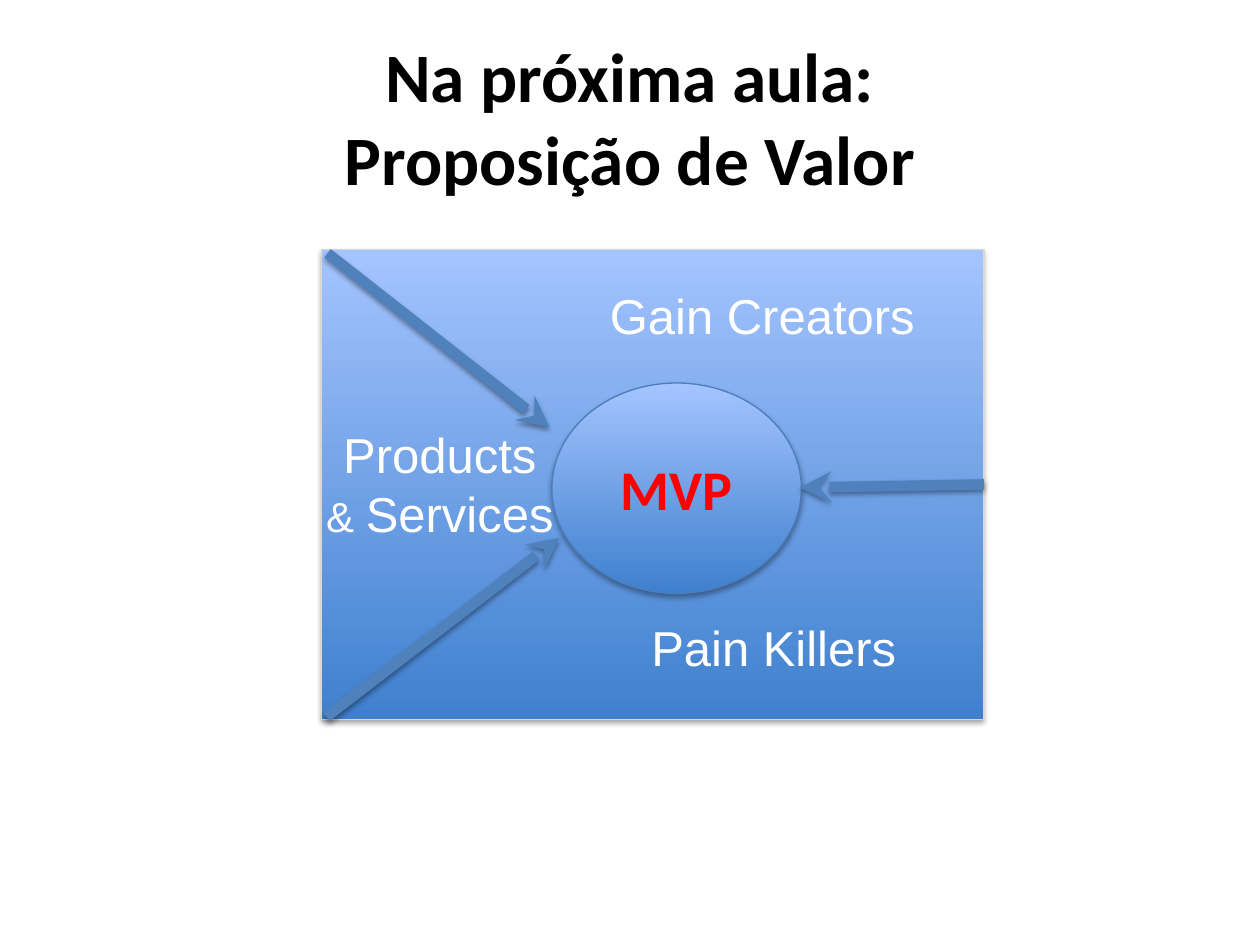
import pptx
import pptx.util
import pptx.oxml
import pptx.oxml.ns
import pptx.dml.color
import pptx.enum.shapes
import pptx.enum.text

Inches = pptx.util.Inches
Pt = pptx.util.Pt
Shape = pptx.enum.shapes.MSO_SHAPE
COLORS = {"deep": "3F80CE", "pale": "A4C4FF", "frame": "D9D9D9", "rim": "4B7EBC",
          "arrow": "4F81BD", "white": "FFFFFF", "black": "000000", "red": "FF0000"}


class Deck:
    """Holds the style and the current slide, and draws each kind of element."""

    def __init__(self):
        self.prs = pptx.Presentation()
        self.prs.slide_width, self.prs.slide_height = Inches(10), Inches(7.5)
        self.slide = self.prs.slides.add_slide(self.prs.slide_layouts[6])

    def color(self, name):
        return pptx.dml.color.RGBColor.from_string(COLORS[name])

    def shade(self, item, alpha, drop):
        props = item._element.spPr
        for old in props.findall(pptx.oxml.ns.qn("a:effectLst")):
            props.remove(old)
        props.append(pptx.oxml.parse_xml(
            f'<a:effectLst {pptx.oxml.ns.nsdecls("a")}>'
            f'<a:outerShdw blurRad="{Pt(3.1)}" dist="{Pt(drop)}" dir="5400000" rotWithShape="0">'
            f'<a:srgbClr val="{COLORS["black"]}"><a:alpha val="{alpha * 1000}"/></a:srgbClr>'
            '</a:outerShdw></a:effectLst>'))

    def shape(self, kind, box, line):
        item = self.slide.shapes.add_shape(kind, *map(Inches, box))
        item.fill.gradient()
        item.fill.gradient_angle = 90
        for stop, name in zip(item.fill.gradient_stops, ("deep", "pale")):
            stop.color.rgb = self.color(name)
            stop.position = float(name == "pale")
        item.line.color.rgb = self.color(line)
        item.line.width = Pt(0.75)
        self.shade(item, 35, 1.8)
        return item

    def text(self, item, lines, size, font="Arial", color="white", bold=False):
        frame = item.text_frame
        frame.word_wrap = True
        frame.margin_left = frame.margin_right = 0
        para = frame.paragraphs[0]
        para.alignment = pptx.enum.text.PP_ALIGN.CENTER
        para.font.name, para.font.bold = font, bold
        para.font.size = Pt(size)
        para.font.color.rgb = self.color(color)
        for i, line in enumerate(lines):
            if i:
                para.add_line_break()
            for words, own in line if isinstance(line, list) else [(line, None)]:
                run = para.add_run()
                run.text = words
                if own:
                    run.font.size = Pt(own)
        return frame

    def label(self, box, lines, size=28, **look):
        item = self.slide.shapes.add_textbox(*map(Inches, box))
        return self.text(item, lines, size, **look)

    def arrow(self, start, end):
        item = self.slide.shapes.add_connector(
            pptx.enum.shapes.MSO_CONNECTOR.STRAIGHT, *map(Inches, start + end))
        item.line.color.rgb = self.color("arrow")
        item.line.width = Pt(6)
        item.line._get_or_add_ln().append(pptx.oxml.parse_xml(
            f'<a:tailEnd {pptx.oxml.ns.nsdecls("a")} type="stealth"/>'))
        self.shade(item, 38, 1.6)
        return item


def main():
    deck = Deck()
    middle = pptx.enum.text.MSO_ANCHOR.MIDDLE
    panel = deck.shape(Shape.RECTANGLE, (2.55, 1.98, 5.26, 3.73), "frame")
    core = deck.shape(Shape.OVAL, (4.38, 3.04, 1.98, 1.67), "rim")
    name = deck.text(core, ["MVP"], 32, font="Calibri", color="red", bold=True)
    name.vertical_anchor = middle
    deck.arrow((2.6, 2.01), (4.36, 3.39))
    deck.arrow((2.59, 5.69), (4.44, 4.27))
    deck.label((2.48, 3.32, 2.02, 1.04), ["Products", [("& ", 24), ("Services", 28)]])
    deck.label((4.68, 2.22, 2.74, 0.57), ["Gain Creators"])
    deck.arrow((7.81, 3.85), (6.35, 3.87)).begin_connect(panel, 3)
    deck.label((4.95, 4.85, 2.38, 0.57), ["Pain Killers"])
    title = deck.label((0.5, 0.3, 9, 1.25), ["Na próxima aula:", "Proposição de Valor"], 39.6,
                       font="Calibri", color="black", bold=True)
    title.vertical_anchor = middle
    deck.prs.save("out.pptx")


if __name__ == "__main__":
    main()
